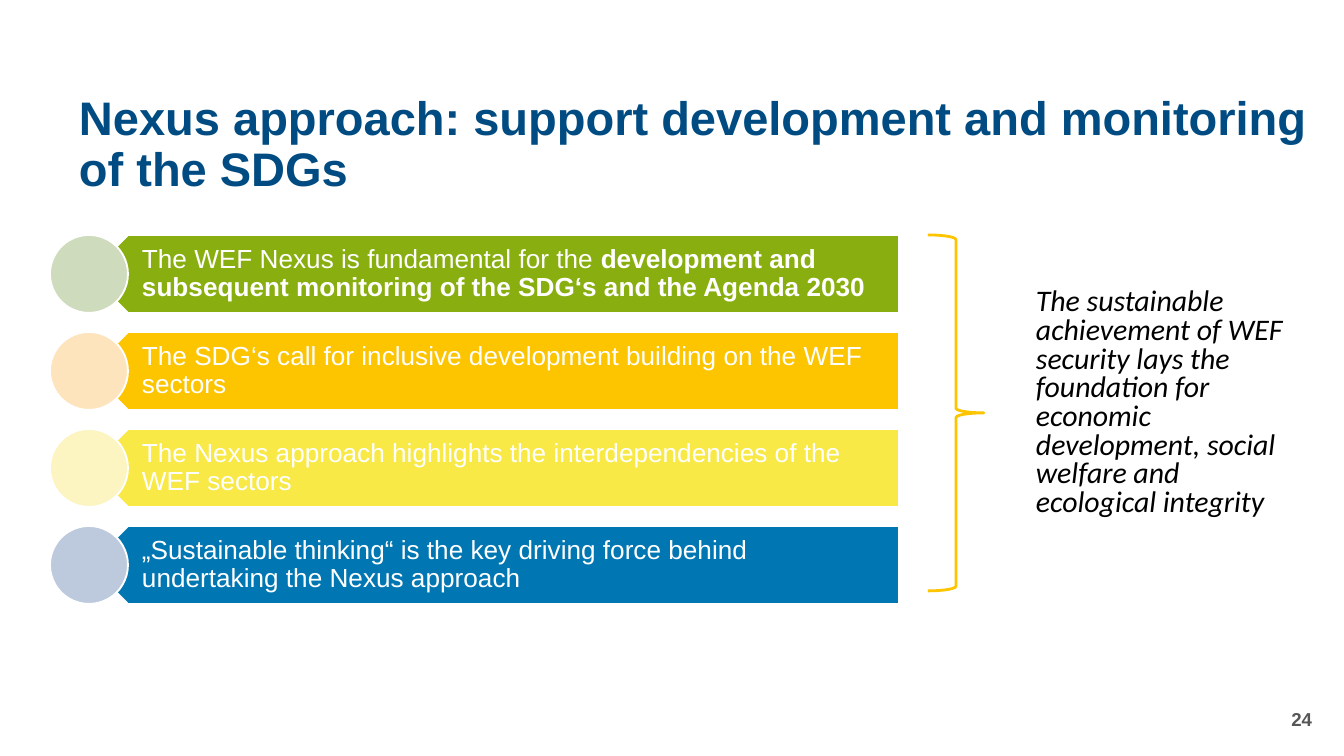
from pptx import Presentation
from pptx.dml.color import RGBColor
from pptx.enum import shapes, text
from pptx.util import Emu, Pt

WHITE = RGBColor(0xFF, 0xFF, 0xFF)
BLACK = RGBColor(0x00, 0x00, 0x00)
NAVY = RGBColor(0x00, 0x4C, 0x82)
GREY = RGBColor(0x57, 0x57, 0x56)
GREEN = RGBColor(0x89, 0xAE, 0x10)
PALE_GREEN = RGBColor(0xCF, 0xDB, 0xBD)
AMBER = RGBColor(0xFD, 0xC4, 0x00)
PALE_AMBER = RGBColor(0xFE, 0xE4, 0xBD)
YELLOW = RGBColor(0xF8, 0xE9, 0x46)
PALE_YELLOW = RGBColor(0xFC, 0xF4, 0xC1)
BLUE = RGBColor(0x00, 0x77, 0xB2)
PALE_BLUE = RGBColor(0xBD, 0xCA, 0xDD)


def px(length):
    """Turn px, at 134.4 to the inch, into EMU."""
    return Emu(round(length * 914400 / 134.4))


class SlideBuilder:
    font = "Arial"
    insets = (13, 7, 13, 7)

    def __init__(self, slide):
        self.slide = slide

    def add_shape(self, kind, box, line, width, fill=None):
        shape = self.slide.shapes.add_shape(kind, *map(px, box))
        shape.shadow.inherit = False
        if fill is None:
            shape.fill.background()
        else:
            shape.fill.solid()
            shape.fill.fore_color.rgb = fill
        shape.line.color.rgb = line
        shape.line.width = Pt(width)
        return shape

    def add_text(self, box, runs, size, color, bold=False, italic=False,
                 font=None, insets=None, spacing=1.0,
                 align=text.PP_ALIGN.LEFT, anchor=text.MSO_ANCHOR.MIDDLE):
        """Runs are pairs of wording and whether it is emphasised."""
        frame = self.slide.shapes.add_textbox(*map(px, box)).text_frame
        frame.word_wrap = True
        frame.vertical_anchor = anchor
        (frame.margin_left, frame.margin_top, frame.margin_right,
         frame.margin_bottom) = map(px, insets or self.insets)
        paragraph = frame.paragraphs[0]
        paragraph.alignment = align
        paragraph.line_spacing = spacing
        for wording, emphasis in runs:
            run = paragraph.add_run()
            run.text = wording
            run.font.name = font or self.font
            run.font.size = Pt(size)
            run.font.color.rgb = color
            run.font.bold = bold or emphasis
            run.font.italic = italic

    def add_statement(self, top, runs, fill, pale):
        """A bar pointing left, its wording and the circle over its tip."""
        height = 78
        bar = self.add_shape(shapes.MSO_SHAPE.PENTAGON,
                             (89, top, 810, height), WHITE, 1, fill)
        bar.rotation = 180
        self.add_text((108, top, 790, height), runs, 14, WHITE,
                      insets=(34, 8, 15, 8), spacing=0.9)
        self.add_shape(shapes.MSO_SHAPE.OVAL,
                       (50, top, height, height), WHITE, 1, pale)


STATEMENTS = [
    ([("The WEF Nexus is fundamental for the ", False),
      ("development and subsequent monitoring of the SDG‘s and the "
       "Agenda 2030", True)], GREEN, PALE_GREEN),
    ([("The SDG‘s call for inclusive development building on the WEF "
       "sectors", False)], AMBER, PALE_AMBER),
    ([("The Nexus approach highlights the interdependencies of the WEF "
       "sectors", False)], YELLOW, PALE_YELLOW),
    ([("„Sustainable thinking“ is the key driving force behind undertaking "
       "the Nexus approach", False)], BLUE, PALE_BLUE),
]


def main():
    presentation = Presentation()
    presentation.slide_width = px(1344)
    presentation.slide_height = px(756)
    slide = presentation.slides.add_slide(presentation.slide_layouts[6])
    builder = SlideBuilder(slide)

    # Statements
    for row, (runs, fill, pale) in enumerate(STATEMENTS):
        builder.add_statement(235 + 97 * row, runs, fill, pale)

    # Title
    builder.add_text(
        (66, 106, 1259, 79),
        [("Nexus approach: support development and monitoring of the SDGs",
          False)],
        25.2, NAVY, bold=True, spacing=0.9)

    # Slide number
    builder.add_text((1023, 699, 302, 40), [("24", False)], 10, GREY,
                     bold=True, align=text.PP_ALIGN.RIGHT)

    # Conclusion and its brace
    builder.add_text(
        (1023, 282, 293, 273),
        [("The sustainable achievement of WEF security lays the foundation "
          "for economic development, social welfare and ecological integrity",
          False)],
        16, BLACK, italic=True, font="Calibri", spacing=0.8,
        anchor=text.MSO_ANCHOR.TOP)
    builder.add_shape(shapes.MSO_SHAPE.RIGHT_BRACE, (928, 235, 56, 356),
                      AMBER, 1.5)

    presentation.save("out.pptx")


if __name__ == "__main__":
    main()
